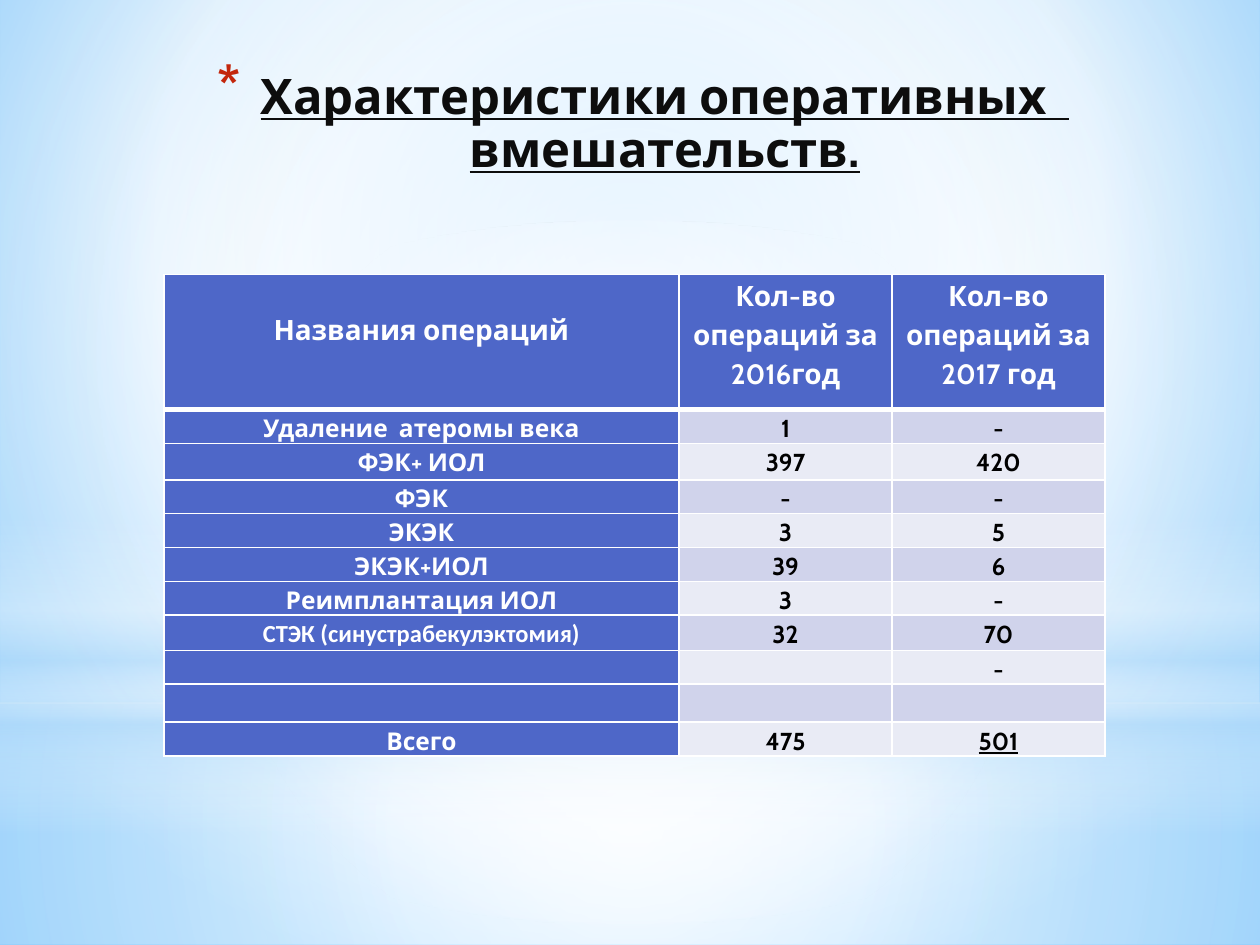
import pptx
import pptx.dml.color
import pptx.enum.shapes
import pptx.enum.text
import pptx.oxml
import pptx.oxml.ns
import pptx.util
from pptx.util import Inches

NS = pptx.oxml.ns.nsdecls("a")
qn = pptx.oxml.ns.qn
SHAPES = pptx.enum.shapes.MSO_SHAPE
CENTER = pptx.enum.text.PP_ALIGN.CENTER
BLUE, WHITE, BLACK = "4E67C8", "FFFFFF", "000000"
BANDS = ["D0D3EB", "E9EBF5"]
COLUMN_WIDTHS = [4.09, 1.69, 1.69]
ROW_HEIGHTS = [1.07, 0.25, 0.29, 0.25, 0.25, 0.26, 0.25, 0.28, 0.25, 0.3, 0.25]
ROWS = [
    ["Названия операций", "Кол-во операций за 2016год", "Кол-во операций за 2017 год"],
    ["Удаление  атеромы века", "1", "-"],
    ["ФЭК+ ИОЛ", "397", "420"],
    ["ФЭК", "-", "-"],
    ["ЭКЭК", "3", "5"],
    ["ЭКЭК+ИОЛ", "39", "6"],
    ["Реимплантация ИОЛ", "3", "-"],
    ["СТЭК (синустрабекулэктомия)", "32", "70"],
    ["", "", "-"],
    ["", "", ""],
    ["Всего", "475", "501"],
]


def rgb(color):
    return pptx.dml.color.RGBColor.from_string(color)


def set_gradient(fill, holder, stops, center=None):
    fill.solid()
    stop_xml = "".join(
        f'<a:gs pos="{pos * 1000}"><a:srgbClr val="{color}">'
        f'<a:alpha val="{alpha * 1000}"/></a:srgbClr></a:gs>'
        for pos, color, alpha in stops
    )
    if center:
        sides = " ".join(f'{side}="{v * 1000}"' for side, v in zip("ltrb", center))
        direction = f'<a:path path="circle"><a:fillToRect {sides}/></a:path>'
    else:
        direction = '<a:lin ang="5400000" scaled="0"/>'
    xml = f'<a:gradFill {NS} rotWithShape="1"><a:gsLst>{stop_xml}</a:gsLst>{direction}</a:gradFill>'
    holder.replace(holder.find(qn("a:solidFill")), pptx.oxml.parse_xml(xml))


def add_glow(slide, kind, top, height, stops, center=None):
    sp = slide.shapes.add_shape(kind, 0, Inches(top), Inches(10), Inches(height))
    sp.shadow.inherit = False
    sp.line.fill.background()
    set_gradient(sp.fill, sp.element.spPr, stops, center)


def add_backdrop(slide):
    fill = slide.background.fill
    fill.solid()
    holder = slide.element.find(".//" + qn("p:bgPr"))
    set_gradient(fill, holder, [(0, "9ED5FF", 100), (60, WHITE, 100), (100, "5BB9FF", 100)],
                 (20, 10, 20, 60))
    middle = (50, 50, 50, 50)
    add_glow(slide, SHAPES.RECTANGLE, 5.58, 1.92,
             [(0, WHITE, 91), (37, WHITE, 76), (100, "B4DCFA", 79)], middle)
    add_glow(slide, SHAPES.RECTANGLE, 0, 5.58,
             [(0, WHITE, 89), (48, WHITE, 62), (100, "B4DCFA", 79)], middle)
    add_glow(slide, SHAPES.RECTANGLE, 4.12, 2.5,
             [(0, WHITE, 0), (29, WHITE, 30), (45, "B4DCFA", 40),
              (55, WHITE, 26), (65, "B4DCFA", 60), (100, WHITE, 0)])
    add_glow(slide, SHAPES.OVAL, 1.75, 5.58, [(0, WHITE, 100), (56, WHITE, 0)], middle)


def style_paragraph(p, size, color, font="Cabin", underline=None):
    p.alignment = CENTER
    p.font.size = pptx.util.Pt(size)
    p.font.name = font
    p.font.bold = True
    p.font.underline = underline
    p.font.color.rgb = rgb(color)


def add_bullet(p, char, color, percent):
    pPr = p._p.get_or_add_pPr()
    pPr.set("marL", str(Inches(0.35)))
    pPr.set("indent", str(-Inches(0.35)))
    bullet = [f'<a:buClr {NS}><a:srgbClr val="{color}"/></a:buClr>',
              f'<a:buSzPct {NS} val="{percent * 1000}"/>',
              f'<a:buChar {NS} char="{char}"/>']
    defaults = pPr.find(qn("a:defRPr"))
    for xml in bullet:
        defaults.addprevious(pptx.oxml.parse_xml(xml))


def add_title(slide, text):
    tf = slide.shapes.add_textbox(Inches(1.54), Inches(0.52), Inches(7.12), Inches(1.25)).text_frame
    tf.word_wrap = True
    p = tf.paragraphs[0]
    p.text = text
    style_paragraph(p, 28, "0D0D0D", underline=True)
    p.line_spacing = 0.9
    add_bullet(p, "*", "C3260C", 128)


def set_borders(cell, widths):
    tcPr = cell._tc.get_or_add_tcPr()
    for i, (side, width) in enumerate(zip("LRTB", widths)):
        tcPr.insert(i, pptx.oxml.parse_xml(
            f'<a:ln{side} {NS} w="{pptx.util.Pt(width)}"><a:solidFill>'
            f'<a:srgbClr val="{WHITE}"/></a:solidFill></a:ln{side}>'))


def fill_cell(cell, text, row, col):
    is_label = row == 0 or col == 0
    cell.margin_left = cell.margin_right = Inches(0.07)
    cell.margin_top = Inches(0.27 if row == col == 0 else 0)
    cell.margin_bottom = 0
    cell.fill.solid()
    cell.fill.fore_color.rgb = rgb(BLUE if is_label else BANDS[(row - 1) % 2])
    set_borders(cell, [1, 1, 3 if row == 1 else 1, 3 if row == 0 else 1])
    p = cell.text_frame.paragraphs[0]
    if text:
        p.text = text
    style_paragraph(p, 14 if row else 16, WHITE if is_label else BLACK,
                    "Calibri" if text.startswith("СТЭК") else "Cabin",
                    True if text == "501" else None)
    p.line_spacing = 1.15


def add_operations_table(slide):
    table = slide.shapes.add_table(len(ROWS), len(COLUMN_WIDTHS), Inches(1.3), Inches(2.18),
                                   Inches(sum(COLUMN_WIDTHS)), Inches(sum(ROW_HEIGHTS))).table
    for column, width in zip(table.columns, COLUMN_WIDTHS):
        column.width = Inches(width)
    for r, (height, texts) in enumerate(zip(ROW_HEIGHTS, ROWS)):
        table.rows[r].height = Inches(height)
        for c, text in enumerate(texts):
            fill_cell(table.cell(r, c), text, r, c)


def main():
    prs = pptx.Presentation()
    prs.slide_width, prs.slide_height = Inches(10), Inches(7.5)
    slide = prs.slides.add_slide(prs.slide_layouts[6])
    add_backdrop(slide)
    add_title(slide, "Характеристики оперативных   вмешательств.")
    add_operations_table(slide)
    prs.save("out.pptx")


if __name__ == "__main__":
    main()
